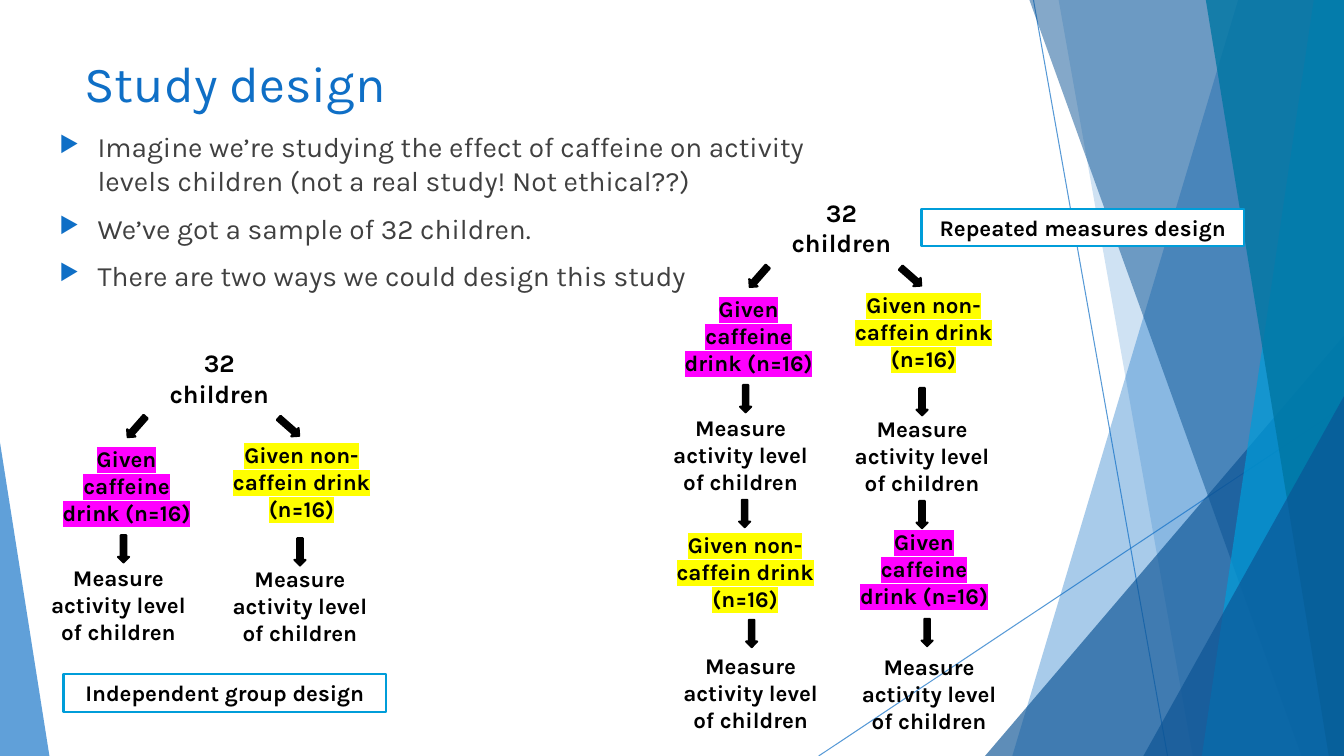
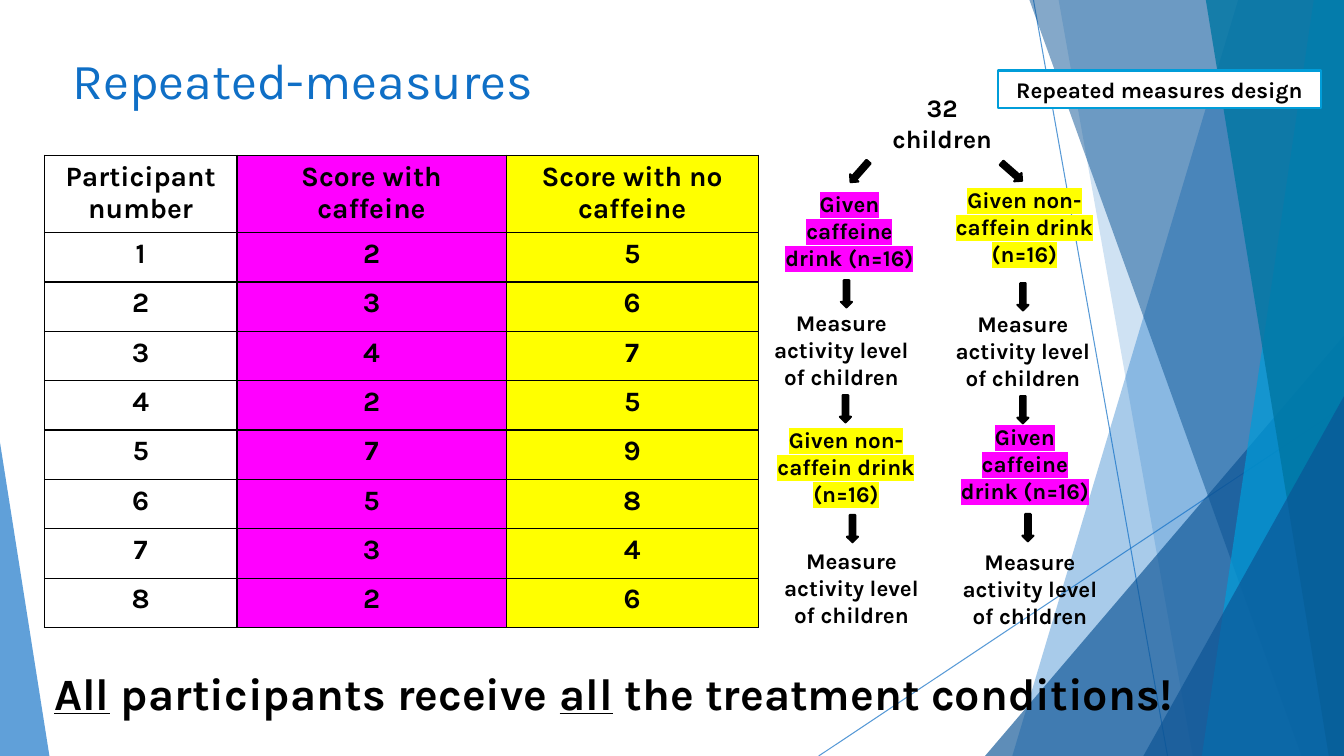
from dataclasses import dataclass

from lxml import etree
from pptx import Presentation
from pptx import util as u
from pptx.dml import color as dml
from pptx.enum import shapes, text
from pptx.oxml import ns

PX = 9144  # EMU, so 100 px make an inch
WIDTH, HEIGHT = 1333, 750
FONT = "Karla"
BLUE, NAVY, CYAN, TEAL = "0F6FC6", "0B5394", "009DD9", "0076A3"
BLACK, WHITE, GREY = "000000", "FFFFFF", "404040"
MAGENTA, YELLOW = "FF00FF", "FFFF00"


@dataclass(frozen=True)
class Box:
    left: int
    top: int
    width: int
    height: int

    def emu(self) -> tuple[int, ...]:
        return tuple(n * PX for n in (self.left, self.top, self.width, self.height))


@dataclass(frozen=True)
class Style:
    size: int
    color: str = BLACK
    bold: bool = True
    align: text.PP_ALIGN = text.PP_ALIGN.CENTER


@dataclass(frozen=True)
class Band:
    """A slanted stripe; the points run clockwise from the top left."""
    points: tuple[tuple[int, int], ...]
    color: str
    opacity: int


@dataclass(frozen=True)
class Corner:
    """A right-angled triangle with its apex at 0 (left) or 1 (right)."""
    box: Box
    apex: int
    color: str


@dataclass(frozen=True)
class Step:
    """A text of the flow chart, placed from the chart's origin."""
    words: str
    left: int
    top: int
    width: int = 163
    height: int = 91
    size: int = 16
    highlight: str = ""


@dataclass(frozen=True)
class Arrow:
    left: int
    top: int
    rotation: float = 90


TITLE = Style(36, BLUE, False, text.PP_ALIGN.LEFT)
BODY = Style(20, GREY, False, text.PP_ALIGN.LEFT)
CELL = Style(20)
LABEL = Style(16)
MESSAGE = Style(32, align=text.PP_ALIGN.LEFT)


def band(top_left: int, bottom_left: int, color: str, opacity: int) -> Band:
    points = ((top_left, 0), (WIDTH, 0), (WIDTH, HEIGHT), (bottom_left, HEIGHT))
    return Band(points, color, opacity)


RAYS = (((1025, 0), (1158, HEIGHT)), ((WIDTH, 403), (812, HEIGHT)))
BACKDROP = (
    band(1228, 1004, BLUE, 36),
    band(1050, 1183, BLUE, 20),
    Corner(Box(977, 333, 356, 417), 1, NAVY),
    band(1021, 1291, NAVY, 50),
    band(1303, 1192, CYAN, 70),
    band(1196, 1318, TEAL, 80),
    Corner(Box(1134, 393, 199, 357), 1, NAVY),
    Corner(Box(0, 439, 49, 311), 0, BLUE),
)


def caffeine(left: int, top: int) -> Step:
    return Step("Given caffeine drink (n=16)", left, top, highlight=MAGENTA)


def no_caffeine(left: int, top: int) -> Step:
    return Step("Given non-caffein drink (n=16)", left, top, 172, highlight=YELLOW)


def measure(left: int, top: int) -> Step:
    return Step("Measure activity level of children", left, top)


FIRST_TREATMENT = (
    Step("32 children", 0, 0, 137, 71, 18),
    no_caffeine(64, 93), caffeine(-105, 97),
    Arrow(124, 78, 41.3), Arrow(-27, 78, 131.3),
    Arrow(135, 202), Arrow(-40, 199),
    measure(-113, 215), measure(67, 216),
)
SECOND_TREATMENT = (
    no_caffeine(-113, 331), caffeine(69, 328),
    Arrow(135, 314), Arrow(-41, 313),
    measure(-103, 451), measure(74, 452),
    Arrow(140, 431), Arrow(-34, 432),
)
BOTH_TREATMENTS = FIRST_TREATMENT + SECOND_TREATMENT

BULLETS = (
    "Imagine we’re studying the effect of caffeine on activity levels children "
    "(not a real study! Not ethical??)",
    "We’ve got a sample of 32 children.",
    "There are two ways we could design this study",
)
HEADINGS = ("Participant number", "Score with caffeine", "Score with no caffeine")
SCORES = ((2, 5), (3, 6), (4, 7), (2, 5), (7, 9), (5, 8), (3, 4), (2, 6))
COLUMN_WIDTHS = (191, 267, 250)
COLUMN_FILLS = ("", MAGENTA, YELLOW)


def rgb(value: str) -> dml.RGBColor:
    return dml.RGBColor.from_string(value)


def add_child(parent, tag: str, **attributes: str):
    child = etree.SubElement(parent, ns.qn(tag))
    for name, value in attributes.items():
        child.set(name, value)
    return child


def paint(fill, color: str, opacity: int = 100) -> None:
    """Apply a solid fill, see-through if the opacity is below 100 percent."""
    fill.solid()
    fill.fore_color.rgb = rgb(color)
    if opacity < 100:
        # the colour element is reached through the fill's own XML
        tint = fill._xPr.find(ns.qn("a:solidFill"))[0]
        add_child(tint, "a:alpha", val=str(opacity * 1000))


def style_paragraph(para, style: Style) -> None:
    para.alignment = style.align
    font = para.font
    font.name, font.size, font.bold = FONT, u.Pt(style.size), style.bold
    font.color.rgb = rgb(style.color)


def add_text(page, box: Box, words: str, style: Style):
    shape = page.shapes.add_textbox(*box.emu())
    shape.text_frame.word_wrap = True
    para = shape.text_frame.paragraphs[0]
    if words:
        para.add_run().text = words
    style_paragraph(para, style)
    return para


def add_plain_shape(page, kind, box: Box, color: str, line: str = "", opacity: int = 100):
    shape = page.shapes.add_shape(kind, *box.emu())
    shape.shadow.inherit = False
    paint(shape.fill, color, opacity)
    if line:
        shape.line.color.rgb = rgb(line)
        shape.line.width = u.Pt(1.5)
    else:
        shape.line.fill.background()
    return shape


def add_backdrop(page) -> None:
    for start, end in RAYS:
        ray = page.shapes.add_connector(
            shapes.MSO_CONNECTOR.STRAIGHT, *(n * PX for n in start + end))
        ray.line.width = u.Pt(0.75)
        paint(ray.line.fill, BLUE, 70)
        add_child(ray._element.spPr, "a:effectLst")
    for part in BACKDROP:
        if isinstance(part, Corner):
            corner = add_plain_shape(page, shapes.MSO_SHAPE.ISOSCELES_TRIANGLE,
                                     part.box, part.color, opacity=66)
            corner.adjustments[0] = part.apex
        else:
            builder = page.shapes.build_freeform(*part.points[0], scale=PX)
            builder.add_line_segments(part.points[1:], close=True)
            stripe = builder.convert_to_shape()
            stripe.shadow.inherit = False
            paint(stripe.fill, part.color, part.opacity)
            stripe.line.fill.background()


def add_page(deck, title: str, title_box: Box):
    page = deck.slides.add_slide(deck.slide_layouts[6])
    add_backdrop(page)
    add_text(page, title_box, title, TITLE)
    return page


def add_bullets(page, box: Box, items: tuple[str, ...]) -> None:
    frame = page.shapes.add_textbox(*box.emu()).text_frame
    frame.word_wrap = True
    for index, item in enumerate(items):
        para = frame.add_paragraph() if index else frame.paragraphs[0]
        para.add_run().text = item
        if index:
            para.space_before = u.Pt(10)
        properties = para._p.get_or_add_pPr()
        properties.set("marL", str(38 * PX))
        properties.set("indent", str(-38 * PX))
        add_child(add_child(properties, "a:buClr"), "a:srgbClr", val=BLUE)
        add_child(properties, "a:buSzPct", val="80000")
        add_child(properties, "a:buChar", char="▶")
        style_paragraph(para, BODY)


def add_flow(page, left: int, top: int, parts: tuple[Step | Arrow, ...]) -> None:
    for part in parts:
        x, y = left + part.left, top + part.top
        if isinstance(part, Arrow):
            arrow = add_plain_shape(page, shapes.MSO_SHAPE.RIGHT_ARROW,
                                    Box(x, y, 27, 11), BLACK, BLACK)
            arrow.rotation = part.rotation
            continue
        para = add_text(page, Box(x, y, part.width, part.height), part.words,
                        Style(part.size))
        if part.highlight:
            marker = add_child(para.runs[0]._r.get_or_add_rPr(), "a:highlight")
            add_child(marker, "a:srgbClr", val=part.highlight)


def add_label(page, left: int, top: int, words: str) -> None:
    label = add_plain_shape(page, shapes.MSO_SHAPE.RECTANGLE,
                            Box(left, top, 320, 37), WHITE, CYAN)
    label.text_frame.word_wrap = True
    para = label.text_frame.paragraphs[0]
    para.add_run().text = words
    style_paragraph(para, LABEL)


def add_scores(page, box: Box) -> None:
    rows = [HEADINGS] + [(number, *pair) for number, pair in enumerate(SCORES, 1)]
    table = page.shapes.add_table(len(rows), len(HEADINGS), *box.emu()).table
    table.first_row = table.horz_banding = False
    for column, width in zip(table.columns, COLUMN_WIDTHS):
        column.width = width * PX
    for index, (row, values) in enumerate(zip(table.rows, rows)):
        row.height = (49 if index else 75) * PX
        for cell, value, color in zip(row.cells, values, COLUMN_FILLS):
            para = cell.text_frame.paragraphs[0]
            para.add_run().text = str(value)
            style_paragraph(para, CELL)
            properties = cell._tc.get_or_add_tcPr()
            for side in "LRTB":
                border = add_child(properties, f"a:ln{side}", w=str(u.Pt(1)))
                add_child(add_child(border, "a:solidFill"), "a:srgbClr", val=BLACK)
            if color:
                paint(cell.fill, color)
            else:
                cell.fill.background()


def add_message(page, box: Box) -> None:
    para = add_text(page, box, "", MESSAGE)
    for words, underlined in (("All", True), (" participants receive ", False),
                              ("all", True), (" the treatment conditions!", False)):
        span = para.add_run()
        span.text = words
        span.font.underline = underlined


def main() -> None:
    deck = Presentation()
    deck.slide_width, deck.slide_height = WIDTH * PX, HEIGHT * PX

    page = add_page(deck, "Study design", Box(74, 47, 940, 144))
    add_bullets(page, Box(49, 124, 825, 185), BULLETS)
    add_flow(page, 149, 340, FIRST_TREATMENT)
    add_label(page, 63, 669, "Independent group design")
    add_flow(page, 766, 191, BOTH_TREATMENTS)
    add_label(page, 914, 207, "Repeated measures design")

    page = add_page(deck, "Repeated-measures", Box(62, 44, 1178, 181))
    add_scores(page, Box(44, 154, 708, 467))
    add_message(page, Box(44, 656, 1135, 64))
    add_flow(page, 866, 87, BOTH_TREATMENTS)
    add_label(page, 990, 70, "Repeated measures design")

    deck.save("out.pptx")


if __name__ == "__main__":
    main()
